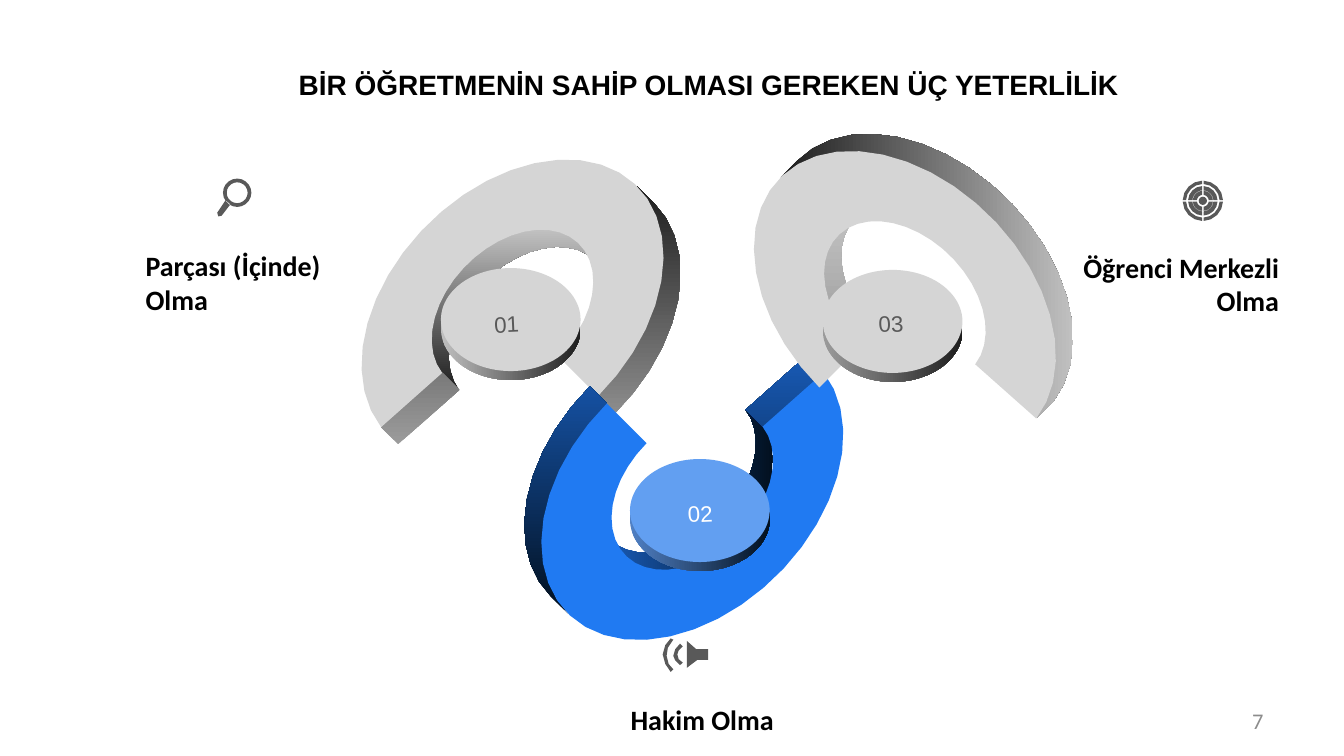
from math import cos, hypot, radians, sin, sqrt

from pptx import Presentation
from pptx.dml.color import RGBColor
from pptx.enum.shapes import MSO_SHAPE
from pptx.enum.text import MSO_ANCHOR, MSO_AUTO_SIZE, PP_ALIGN
from pptx.util import Pt

BLACK = RGBColor(0x00, 0x00, 0x00)
WHITE = RGBColor(0xFF, 0xFF, 0xFF)
ICON = RGBColor(0x59, 0x59, 0x59)
PAGE = RGBColor(0x8C, 0x8C, 0x8C)
GREY = RGBColor(0xD5, 0xD5, 0xD5)
GREY_LIGHT = RGBColor(0xC0, 0xC0, 0xC0)
GREY_CAP = RGBColor(0x9B, 0x9B, 0x9B)
GREY_DARK = RGBColor(0x1E, 0x1E, 0x1E)
BLUE = RGBColor(0x20, 0x7A, 0xF2)
BLUE_CAP = RGBColor(0x18, 0x5A, 0xB5)
BLUE_DARK = RGBColor(0x02, 0x10, 0x1F)
BLUE_DISC = RGBColor(0x62, 0x9F, 0xF1)
BLUE_EDGE = RGBColor(0x50, 0x80, 0xC4)

# Ring: tilted circle; "major" and "minor" are the diagonals where it starts and bulges.
MAJOR, MINOR, HOLE, DEPTH = 94.3, 64.8, 0.535, 12.9
START, HALF, END = 5, 180, 270
RINGS = [
    dict(center=(274.6, 166.4), major=(-1, 1), minor=(-1, -1), front=False, face=GREY,
         outer=(90, GREY_CAP, GREY_DARK), inner=(90, GREY_DARK, GREY_LIGHT)),
    dict(center=(370.9, 262), major=(1, -1), minor=(1, 1), front=False, face=BLUE,
         outer=(90, BLUE_DARK, BLUE_CAP), inner=(0, BLUE_CAP, BLUE_DARK)),
    dict(center=(484.8, 161.8), major=(1, 1), minor=(1, -1), front=True, face=GREY,
         outer=(0, GREY_DARK, GREY_LIGHT), inner=(90, GREY_CAP, GREY_LIGHT)),
]

# number, disc left and top, text left and top, top colour, edge gradient, text colour
DISC_W, DISC_H, DISC_DEPTH = 74.8, 55.2, 4.8
DISCS = [
    ("01", 236.2, 143.6, 252.7, 162.7, GREY, (GREY_LIGHT, GREY_DARK), ICON),
    ("02", 337.5, 245.9, 356.4, 264.2, BLUE_DISC, (BLUE_EDGE, BLUE_DARK), WHITE),
    ("03", 440.8, 144.6, 458.6, 162.4, GREY, (GREY_CAP, GREY_DARK), ICON),
]

# text, left, top, width, height, alignment, font values
BOLD = dict(name="Calibri", size=Pt(15), bold=True)
LABELS = [
    ("BİR ÖĞRETMENİN SAHİP OLMASI GEREKEN ÜÇ YETERLİLİK",
     82.1, 32.4, 595.4, 25.2, PP_ALIGN.CENTER, dict(BOLD, name="Arial")),
    ("Parçası (İçinde) Olma", 70.9, 129.6, 132.5, 43.9, PP_ALIGN.LEFT, BOLD),
    ("Öğrenci Merkezli Olma", 569.9, 130.6, 122.4, 43.9, PP_ALIGN.RIGHT, BOLD),
    ("Hakim Olma", 303.5, 373, 145.4, 20.2, PP_ALIGN.CENTER, BOLD),
]

SPEAKER = [
    [(368, 343.4), (373, 347.8), (379.4, 347.8), (379.4, 353.5), (373.7, 353.5), (368, 357.8)],
    [(360.7, 358.6), (359.3, 360), (356.4, 355.7), (355, 350.6), (356.4, 345.6),
     (359.3, 342), (360.7, 342.7), (357.8, 347), (357.1, 351.4), (358.2, 355.7)],
    [(365.8, 355), (364.3, 356.4), (361.8, 353.9), (360.7, 351.4), (361.8, 347.8),
     (364.3, 344.9), (365.8, 346.3), (363.6, 348.5), (362.9, 350.6), (363.6, 353.2)],
]
LENS = (127.1, 103.3)
HANDLE = [(120.9, 107.3), (123.5, 109.5), (118.8, 115.6), (117, 116), (116.4, 114)]
TARGET, TARGET_GAP = (644.4, 107.6), 0.4
TARGET_RINGS = [(10.8, 9), (7.9, 5.7), (5.4, 3.2)]  # outer and inner radius

prs = Presentation()
prs.slide_width, prs.slide_height = Pt(720), Pt(405)
shapes = prs.slides.add_slide(prs.slide_layouts[6]).shapes


def paint(sp, fill):
    """Fill with one colour, or with (angle, first colour, last colour)."""
    sp.shadow.inherit = False
    sp.line.fill.background()
    if isinstance(fill, RGBColor):
        sp.fill.solid()
        sp.fill.fore_color.rgb = fill
        return
    angle, *colors = fill
    sp.fill.gradient()
    sp.fill.gradient_angle = angle
    for stop, color in zip(sp.fill.gradient_stops, colors):
        stop.color.rgb = color


def add_outline(contours, fill):
    """Draw all contours as one shape."""
    contours = [[(Pt(x), Pt(y)) for x, y in points] for points in contours]
    builder = shapes.build_freeform(*contours[0][0], scale=1.0)
    for index, (first, *rest) in enumerate(contours):
        if index:
            builder.move_to(*first)
        builder.add_line_segments(rest, close=True)
    paint(builder.convert_to_shape(), fill)


def add_oval(x, y, fill):
    paint(shapes.add_shape(MSO_SHAPE.OVAL, *map(Pt, (x, y, DISC_W, DISC_H))), fill)


def add_text(text, x, y, w, h, align, color, font, rotation=0, anchor=MSO_ANCHOR.TOP, grow=True):
    sp = shapes.add_textbox(Pt(x), Pt(y), Pt(w), Pt(h))
    sp.rotation = rotation
    tf = sp.text_frame
    tf.word_wrap = True
    tf.vertical_anchor = anchor
    tf.auto_size = MSO_AUTO_SIZE.SHAPE_TO_FIT_TEXT if grow else MSO_AUTO_SIZE.NONE
    p = tf.paragraphs[0]
    p.alignment = align
    r = p.add_run()
    r.text = text
    for key, value in font.items():
        setattr(r.font, key, value)
    r.font.color.rgb = color


def circle(center, radius, steps=20):
    angles = [radians(360 * i / steps) for i in range(steps)]
    return [(center[0] + radius * cos(a), center[1] + radius * sin(a)) for a in angles]


def add_ring(center, major, minor, front, face, outer, inner):
    """Three quarters of a tilted ring, with the walls that its depth shows."""
    def arc(start, end, size):
        steps = max(1, round((end - start) / 9))
        points = []
        for i in range(steps + 1):
            angle = radians(start + (end - start) * i / steps)
            u, v = size * MAJOR * cos(angle) / sqrt(2), size * MINOR * sin(angle) / sqrt(2)
            points.append(tuple(c + u * a + v * b for c, a, b in zip(center, major, minor)))
        return points

    def wall(edge):
        shift = (DEPTH if front else -DEPTH) / sqrt(2)
        back = [tuple(c + shift * b for c, b in zip(point, minor)) for point in edge]
        return edge + back[::-1]

    first, last = (START, HALF), (HALF, END)
    outer_span, inner_span = (first, last) if front else (last, first)
    outer_walls = [wall(arc(*outer_span, 1))]
    if not front:
        outer_walls.append(wall([arc(START, END, 1)[0], arc(START, END, HOLE)[0]]))
    add_outline([wall(arc(*inner_span, HOLE))], inner)
    add_outline(outer_walls, outer)
    add_outline([arc(START, END, 1) + arc(START, END, HOLE)[::-1]], face)


def quarter_bands(center, outer, inner, gap):
    """Four pieces of a circular band, kept apart by a cross-shaped gap."""
    def edge(radius):
        start = gap / hypot(radius, gap)
        return [(radius * cos(a), radius * sin(a))
                for a in (start + (radians(90) - 2 * start) * i / 4 for i in range(5))]

    piece = edge(outer) + edge(inner)[::-1]
    return [[(center[0] + sx * x, center[1] + sy * y) for x, y in piece]
            for sx in (-1, 1) for sy in (-1, 1)]


for ring in RINGS:
    add_ring(**ring)

for number, x, y, text_x, text_y, top, edge, color in DISCS:
    add_oval(x, y + DISC_DEPTH, (0, *edge))
    add_oval(x, y, top)
    add_text(number, text_x, text_y, 37.4, 21.6, PP_ALIGN.CENTER, color,
             dict(name="Arial", size=Pt(12)), rotation=-2.6)

add_outline([circle(LENS, 7.6), circle(LENS, 5.6)[::-1], HANDLE], ICON)
bands = [band for radii in TARGET_RINGS for band in quarter_bands(TARGET, *radii, TARGET_GAP)]
add_outline(bands + [circle(TARGET, 2.2, 12)], ICON)
for part in SPEAKER:
    add_outline([part], ICON)

for text, x, y, w, h, align, font in LABELS:
    add_text(text, x, y, w, h, align, BLACK, font)
add_text("7", 516.2, 375.1, 167.8, 21.6, PP_ALIGN.RIGHT, PAGE,
         dict(name="Calibri", size=Pt(12)), anchor=MSO_ANCHOR.MIDDLE, grow=False)

prs.save("out.pptx")
